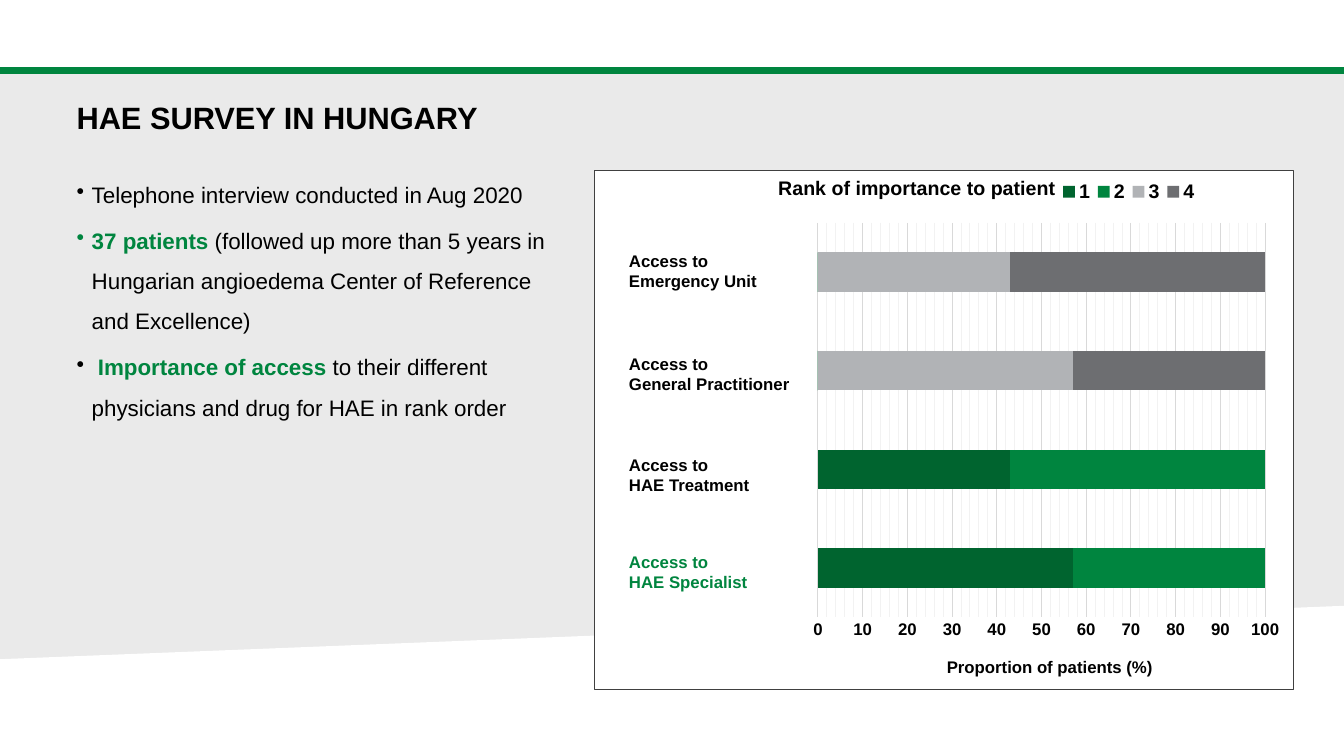
from lxml import etree
from pptx import Presentation
from pptx.chart.data import CategoryChartData
from pptx.dml.color import RGBColor
from pptx.enum.chart import XL_CHART_TYPE, XL_LEGEND_POSITION, XL_TICK_MARK
from pptx.enum.shapes import MSO_CONNECTOR, MSO_SHAPE
from pptx.oxml import parse_xml
from pptx.oxml.ns import nsdecls, qn
from pptx.util import Inches, Pt

STACKED_BAR = XL_CHART_TYPE.BAR_STACKED
LEGEND_TOP = XL_LEGEND_POSITION.TOP
NO_TICK = XL_TICK_MARK.NONE
RECTANGLE = MSO_SHAPE.RECTANGLE
STRAIGHT = MSO_CONNECTOR.STRAIGHT

FONT = "Arial"
COLORS = {
    "black": "000000", "white": "FFFFFF", "panel": "EAEAEA",
    "green": "00853F", "dark_green": "00642F",
    "light_gray": "B1B3B6", "dark_gray": "6D6E71",
    "grid": "D9D9D9", "minor_grid": "F2F2F2", "border": "404040",
}
RANKS = [
    ("1", (57, 43, 0, 0), "dark_green"),
    ("2", (43, 57, 0, 0), "green"),
    ("3", (0, 0, 57, 43), "light_gray"),
    ("4", (0, 0, 43, 57), "dark_gray"),
]
BULLETS = [
    [("Telephone interview conducted in Aug 2020", False)],
    [("37 patients ", True),
     ("(followed up more than 5 years in Hungarian angioedema Center of "
      "Reference and Excellence)", False)],
    [(" ", False), ("Importance of access ", True),
     ("to their different physicians and drug for HAE in rank order", False)],
]
CATEGORY_LABELS = [
    (2.44, "Emergency Unit", "black"),
    (3.46, "General Practitioner", "black"),
    (4.46, "HAE Treatment", "black"),
    (5.42, "HAE Specialist", "green"),
]


def rgb(name):
    return RGBColor.from_string(COLORS[name])


def set_font(font, size, color="black", bold=True):
    font.name = FONT
    font.size = Pt(size)
    font.bold = bold
    font.color.rgb = rgb(color)


def fill_plain(shape, color):
    shape.shadow.inherit = False
    shape.fill.solid()
    shape.fill.fore_color.rgb = rgb(color)
    shape.line.fill.background()


def add_background(slide):
    panel = slide.shapes.add_shape(
        RECTANGLE, 0, Inches(0.7), Inches(13.33), Inches(6.8))
    fill_plain(panel, "panel")

    builder = slide.shapes.build_freeform(0, Inches(6.54))
    corners = [(13.33, 6.01), (13.33, 7.5), (0, 7.5)]
    builder.add_line_segments([(Inches(x), Inches(y)) for x, y in corners])
    fill_plain(builder.convert_to_shape(), "white")

    rule = slide.shapes.add_connector(
        STRAIGHT, 0, Inches(0.7), Inches(13.33), Inches(0.7))
    rule.line.color.rgb = rgb("green")
    rule.line.width = Pt(5)
    etree.SubElement(rule._element.spPr, qn("a:effectLst"))


def add_text_frame(slide, left, top, width, height, insets=None, wrap=True):
    box = slide.shapes.add_textbox(
        Inches(left), Inches(top), Inches(width), Inches(height))
    frame = box.text_frame
    frame.word_wrap = wrap
    if insets:
        (frame.margin_left, frame.margin_top,
         frame.margin_right, frame.margin_bottom) = map(Inches, insets)
    return frame


def add_label(slide, lines, size, color, *place, **options):
    frame = add_text_frame(slide, *place, **options)
    frame.text = "\n".join(lines)
    for paragraph in frame.paragraphs:
        set_font(paragraph.font, size, color)


def add_bullets(slide):
    frame = add_text_frame(slide, 0.76, 1.33, 4.79, 3.72, (0, 0.2, 0, 0.24))
    for index, runs in enumerate(BULLETS):
        paragraph = frame.add_paragraph() if index else frame.paragraphs[0]
        paragraph.line_spacing = 1.5 if index else 2.0
        paragraph.space_before = Pt(4 if index else 0)
        properties = paragraph._p.get_or_add_pPr()
        properties.set("marL", str(Inches(0.15)))
        properties.set("indent", str(Inches(-0.15)))
        etree.SubElement(properties, qn("a:buChar"), char="•")
        for text, highlighted in runs:
            run = paragraph.add_run()
            run.text = text
            set_font(run.font, 16, "green" if highlighted else "black", highlighted)


def set_layout(element, position, x, y, width=None, height=None, inner=False):
    """Place a chart part by fractions of the chart area."""
    layout = element.find(qn("c:layout"))
    if layout is None:
        layout = etree.Element(qn("c:layout"))
        element.insert(position, layout)
    for child in list(layout):
        layout.remove(child)
    manual = etree.SubElement(layout, qn("c:manualLayout"))
    if inner:
        etree.SubElement(manual, qn("c:layoutTarget"), val="inner")
    for tag in ("xMode", "yMode"):
        etree.SubElement(manual, qn("c:" + tag), val="edge")
    for tag, value in zip("xywh", (x, y, width, height)):
        if value is not None:
            etree.SubElement(manual, qn("c:" + tag), val=str(value))


def line_xml(color):
    return (f'<a:ln w="{Pt(0.75)}"><a:solidFill>'
            f'<a:srgbClr val="{COLORS[color]}"/></a:solidFill></a:ln>')


def shape_properties(content):
    return parse_xml(f'<c:spPr {nsdecls("c", "a")}>{content}</c:spPr>')


def style_value_axis(axis):
    axis.minimum_scale = 0
    axis.maximum_scale = 100
    axis.major_unit = 10
    axis.minor_unit = 2
    axis.major_tick_mark = NO_TICK
    axis.minor_tick_mark = NO_TICK
    axis.format.line.fill.background()
    set_font(axis.tick_labels.font, 12)
    axis.has_major_gridlines = True
    axis.has_minor_gridlines = True
    axis.major_gridlines.format.line.color.rgb = rgb("grid")
    axis.major_gridlines.format.line.width = Pt(0.75)
    minor_gridlines = axis._element.find(qn("c:minorGridlines"))
    minor_gridlines.append(shape_properties(line_xml("minor_grid")))
    title = axis.axis_title
    title.text_frame.text = "Proportion of patients (%)"
    set_font(title.text_frame.paragraphs[0].font, 12)
    set_layout(title._element, 1, 0.5, 0.93)


def add_rank_chart(slide):
    data = CategoryChartData()
    data.categories = [name for name, _, _ in RANKS]
    for name, values, _ in RANKS:
        data.add_series(name, values)
    chart = slide.shapes.add_chart(
        STACKED_BAR, Inches(5.89), Inches(1.69), Inches(6.94), Inches(5.16),
        data).chart
    chart.has_title = False
    set_font(chart.font, 10, bold=False)

    # Bars
    plot = chart.plots[0]
    plot.gap_width = 150
    plot.overlap = 100
    plot.vary_by_categories = False
    for series, (_, _, color) in zip(plot.series, RANKS):
        series.format.fill.solid()
        series.format.fill.fore_color.rgb = rgb(color)

    # Axes and legend
    chart.category_axis.visible = False
    style_value_axis(chart.value_axis)
    chart.has_legend = True
    legend = chart.legend
    legend.position = LEGEND_TOP
    legend.include_in_layout = False
    set_font(legend.font, 14)
    set_layout(legend._element, 1, 0.66, 0.01, 0.21, 0.06)

    # Plot position and chart frame
    chart_element = chart._chartSpace.find(qn("c:chart"))
    set_layout(chart_element.find(qn("c:plotArea")), 0,
               0.32, 0.1, 0.64, 0.76, inner=True)
    chart_element.addnext(shape_properties(
        f'<a:solidFill><a:srgbClr val="{COLORS["white"]}"/></a:solidFill>'
        + line_xml("border")))


def main():
    presentation = Presentation()
    presentation.slide_width = Inches(13.33)
    presentation.slide_height = Inches(7.5)
    slide = presentation.slides.add_slide(presentation.slide_layouts[6])

    add_background(slide)
    add_bullets(slide)
    add_label(slide, ["HAE SURVEY IN HUNGARY"], 22, "black",
              0.76, 0.86, 11.99, 0.99, insets=(0, 0.12, 0, 0))
    add_rank_chart(slide)
    add_label(slide, ["Rank of importance to patient"], 14, "black",
              7.62, 1.7, 2.96, 0.34, wrap=False)
    for top, name, color in CATEGORY_LABELS:
        add_label(slide, ["Access to", name], 12, color, 6.14, top, 1.97, 0.5)

    presentation.save("out.pptx")


if __name__ == "__main__":
    main()
